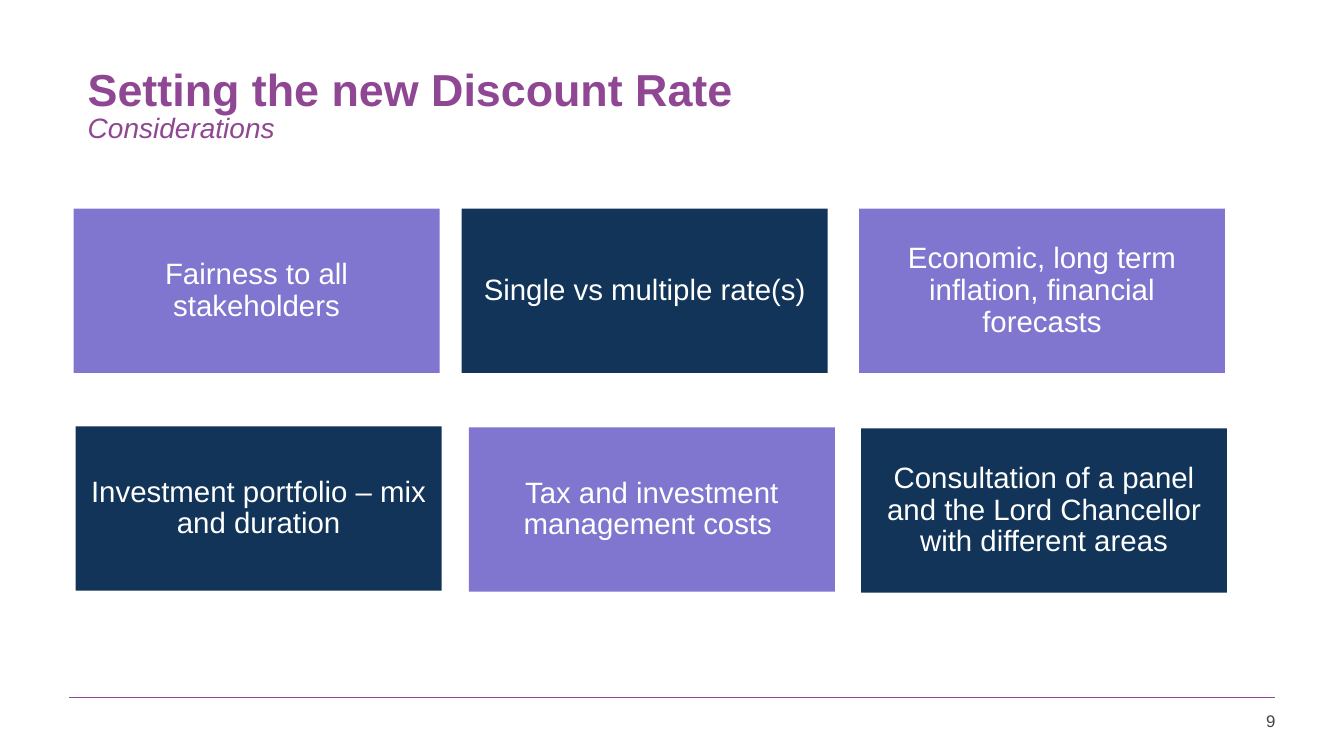
from lxml import etree
from pptx import Presentation
from pptx import util as u
from pptx.dml.color import RGBColor
from pptx.enum import shapes, text
from pptx.oxml.ns import qn

PLUM = RGBColor(0x8F, 0x46, 0x93)
NAVY = RGBColor(0x11, 0x34, 0x58)
VIOLET = RGBColor(0x80, 0x76, 0xCF)
WHITE = RGBColor(0xFF, 0xFF, 0xFF)
GREY = RGBColor(0x3F, 0x45, 0x48)


def add_text(p, words, size, color, bold=False, italic=False,
             align=text.PP_ALIGN.LEFT, spacing=1.0):
    """Append a run to paragraph p and format both."""
    p.alignment = align
    p.line_spacing = spacing
    r = p.add_run()
    r.text = words
    r.font.name = "Arial"
    r.font.size = u.Pt(size)
    r.font.color.rgb = color
    r.font.bold = bold
    r.font.italic = italic


def set_frame(tf, anchor, side, top):
    tf.word_wrap = True
    tf.auto_size = text.MSO_AUTO_SIZE.NONE
    tf.vertical_anchor = anchor
    tf.margin_left = tf.margin_right = u.Inches(side)
    tf.margin_top = tf.margin_bottom = u.Inches(top)


prs = Presentation()
prs.slide_width, prs.slide_height = u.Inches(13.33), u.Inches(7.5)
s = prs.slides.add_slide(prs.slide_layouts[5])

# Footer rule
rule = s.shapes.add_connector(shapes.MSO_CONNECTOR.STRAIGHT, u.Inches(0.68),
                              u.Inches(6.92), u.Inches(12.65), u.Inches(6.92))
rule.line.color.rgb = PLUM
rule.line.width = u.Pt(1)
etree.SubElement(rule.line._get_or_add_ln().getparent(), qn("a:effectLst"))

# Title and subtitle
title = s.shapes.title
title.left, title.top = u.Inches(0.77), u.Inches(0.44)
title.width, title.height = u.Inches(11.88), u.Inches(1.25)
set_frame(title.text_frame, text.MSO_ANCHOR.MIDDLE, 0.1, 0.05)
p = title.text_frame.paragraphs[0]
add_text(p, "Setting the new Discount Rate", 32, PLUM, bold=True, spacing=0.85)
p.add_line_break()
add_text(p, "Considerations", 20, PLUM, italic=True, spacing=0.85)

# Considerations: each box is left, top, wording; colours alternate
CARD_W, CARD_H = 3.63, 1.63
considerations = [
    [(0.73, 2.07, "Fairness to all stakeholders"),
     (4.58, 2.07, "Single vs multiple rate(s)"),
     (8.52, 2.07, "Economic, long term inflation, financial forecasts")],
    [(0.75, 4.23, "Investment portfolio – mix and duration"),
     (4.65, 4.24, "Tax and investment management costs "),
     (8.54, 4.25, "Consultation of a panel and the Lord Chancellor with different areas")],
]
for row, cards in enumerate(considerations):
    for col, (left, top, words) in enumerate(cards):
        sp = s.shapes.add_shape(shapes.MSO_SHAPE.RECTANGLE, u.Inches(left), u.Inches(top),
                                u.Inches(CARD_W), u.Inches(CARD_H))
        sp.shadow.inherit = False
        sp.fill.solid()
        sp.fill.fore_color.rgb = NAVY if (row + col) % 2 else VIOLET
        sp.line.fill.background()
        set_frame(sp.text_frame, text.MSO_ANCHOR.MIDDLE, 0.09, 0.09)
        add_text(sp.text_frame.paragraphs[0], words, 21, WHITE,
                 align=text.PP_ALIGN.CENTER, spacing=0.9)

# Page number
number = s.shapes.add_textbox(u.Inches(11.81), u.Inches(7), u.Inches(0.94), u.Inches(0.37))
set_frame(number.text_frame, text.MSO_ANCHOR.TOP, 0.1, 0.05)
add_text(number.text_frame.paragraphs[0], "9", 12, GREY, align=text.PP_ALIGN.RIGHT)

prs.save("out.pptx")
